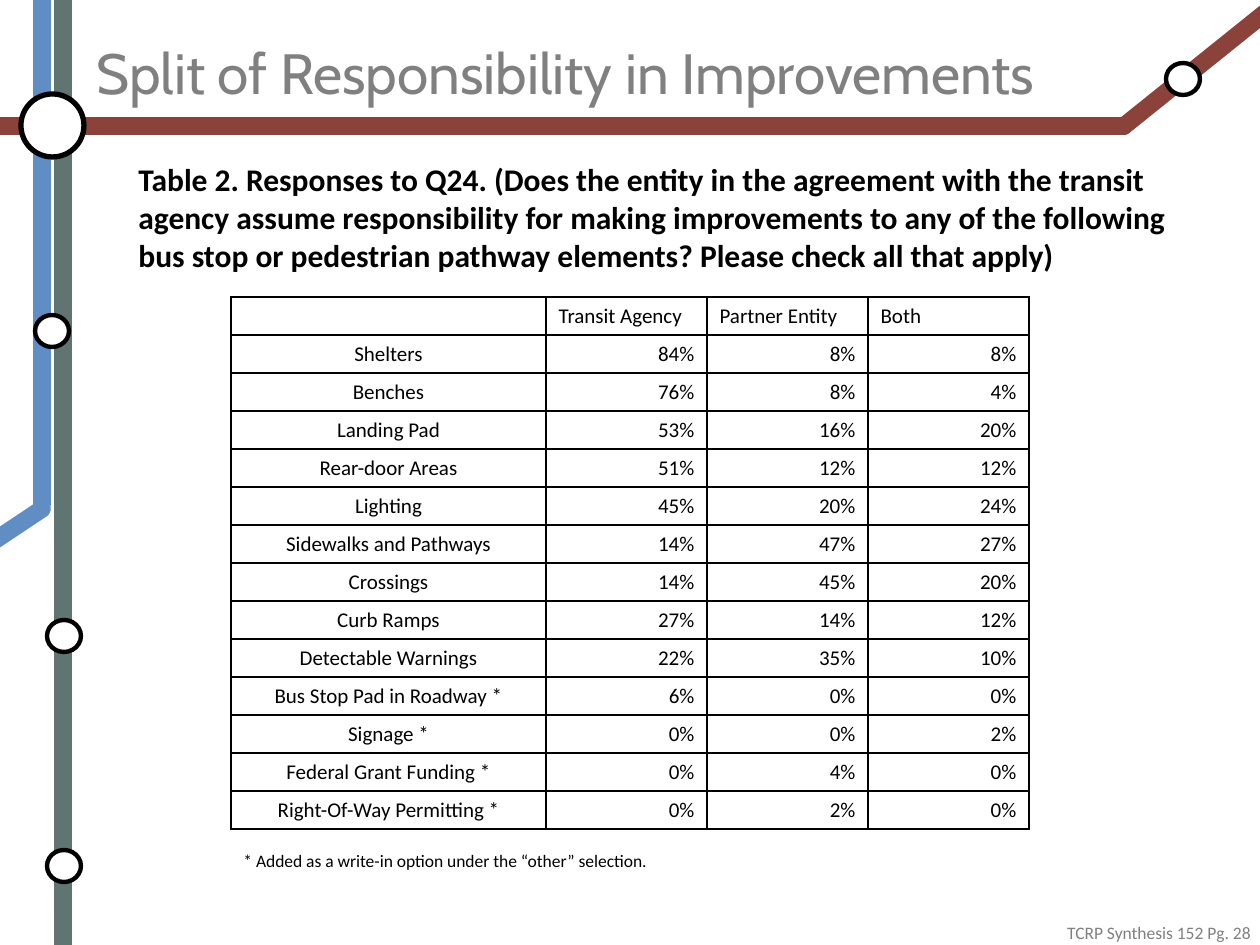
from lxml import etree
from pptx import Presentation, util as u
from pptx.dml.color import RGBColor
from pptx.enum import shapes, text
from pptx.oxml.ns import qn

EMU_PER_PX = 914400 / 126
BLACK = RGBColor(0, 0, 0)
WHITE = RGBColor(255, 255, 255)
GRAY = RGBColor(0x80, 0x80, 0x80)
GREEN = RGBColor(0x60, 0x74, 0x72)
BLUE = RGBColor(0x60, 0x8D, 0xC4)
RED = RGBColor(0x8A, 0x42, 0x3A)
LEFT, CENTER, RIGHT = text.PP_ALIGN.LEFT, text.PP_ALIGN.CENTER, text.PP_ALIGN.RIGHT

ROUTES = [
    (63, 945, 63, 0, GREEN),
    (42, 504, 42, 0, BLUE),
    (42, 509, -21, 551, BLUE),
    (0, 126, 1124, 126, RED),
    (1281, 0, 1124, 126, RED),
]
STOPS = [(47, 620), (47, 850), (35, 315), (1166, 63)]
ROWS = [
    ("", "Transit Agency", "Partner Entity", "Both"),
    ("Shelters", "84%", "8%", "8%"),
    ("Benches", "76%", "8%", "4%"),
    ("Landing Pad", "53%", "16%", "20%"),
    ("Rear-door Areas", "51%", "12%", "12%"),
    ("Lighting", "45%", "20%", "24%"),
    ("Sidewalks and Pathways", "14%", "47%", "27%"),
    ("Crossings", "14%", "45%", "20%"),
    ("Curb Ramps", "27%", "14%", "12%"),
    ("Detectable Warnings", "22%", "35%", "10%"),
    ("Bus Stop Pad in Roadway *", "6%", "0%", "0%"),
    ("Signage *", "0%", "0%", "2%"),
    ("Federal Grant Funding *", "0%", "4%", "0%"),
    ("Right-Of-Way Permitting *", "0%", "2%", "0%"),
]
COLUMN_WIDTHS = [315, 161, 161, 161]
ROW_HEIGHT = 38
QUESTION = (
    "Table 2. Responses to Q24. (Does the entity in the agreement with the transit "
    "agency assume responsibility for making improvements to any of the following "
    "bus stop or pedestrian pathway elements? Please check all that apply)"
)


def px(*lengths):
    return [u.Emu(round(length * EMU_PER_PX)) for length in lengths]


def add_route(page, x1, y1, x2, y2, color):
    """Draw one transit line with rounded ends."""
    route = page.shapes.add_connector(shapes.MSO_CONNECTOR.STRAIGHT, *px(x1, y1, x2, y2))
    route.line.color.rgb = color
    route.line.width = u.Pt(10)
    properties = route._element.spPr
    properties.find(qn("a:ln")).set("cap", "rnd")
    etree.SubElement(properties, qn("a:effectLst"))


def add_stop(page, left, top, width, height, weight):
    stop = page.shapes.add_shape(shapes.MSO_SHAPE.OVAL, *px(left, top, width, height))
    stop.shadow.inherit = False
    stop.fill.solid()
    stop.fill.fore_color.rgb = WHITE
    stop.line.color.rgb = BLACK
    stop.line.width = u.Pt(weight)


def write(para, words, size, color=BLACK, font="Calibri", bold=False, align=LEFT):
    para.alignment = align
    span = para.add_run()
    span.text = words
    span.font.name = font
    span.font.size = u.Pt(size)
    span.font.bold = bold
    span.font.color.rgb = color


def add_text(page, area, words, size, anchor=text.MSO_ANCHOR.TOP, wrap=True, **style):
    box = page.shapes.add_textbox(*px(*area))
    box.text_frame.word_wrap = wrap
    box.text_frame.vertical_anchor = anchor
    write(box.text_frame.paragraphs[0], words, size, **style)


def add_borders(cell):
    properties = cell._tc.get_or_add_tcPr()
    for place, side in enumerate(("lnL", "lnR", "lnT", "lnB")):
        border = etree.Element(qn(f"a:{side}"), w=str(u.Pt(1)))
        fill = etree.SubElement(border, qn("a:solidFill"))
        etree.SubElement(fill, qn("a:srgbClr"), val=str(BLACK))
        properties.insert(place, border)


def fill_cell(cell, words, align):
    cell.fill.background()
    cell.vertical_anchor = text.MSO_ANCHOR.MIDDLE
    add_borders(cell)
    para = cell.text_frame.paragraphs[0]
    if words:
        write(para, words, 12, align=align)
    else:
        etree.SubElement(para._p, qn("a:endParaRPr"), sz="1200")


def add_responses(page, left, top):
    area = px(left, top, sum(COLUMN_WIDTHS), ROW_HEIGHT * len(ROWS))
    table = page.shapes.add_table(len(ROWS), len(COLUMN_WIDTHS), *area).table
    table.first_row = table.horz_banding = False
    for column, width in zip(table.columns, px(*COLUMN_WIDTHS)):
        column.width = width
    for r, row in enumerate(ROWS):
        table.rows[r].height = px(ROW_HEIGHT)[0]
        for c, words in enumerate(row):
            align = LEFT if r == 0 else CENTER if c == 0 else RIGHT
            fill_cell(table.cell(r, c), words, align)


def main():
    deck = Presentation()
    deck.slide_width, deck.slide_height = px(1260, 945)
    page = deck.slides.add_slide(deck.slide_layouts[6])
    for route in ROUTES:
        add_route(page, *route)
    add_stop(page, 21, 94, 63, 63, 3)
    for left, top in STOPS:
        add_stop(page, left, top, 34, 32, 2.5)
    add_text(page, (84, 38, 1040, 67), "Split of Responsibility in Improvements", 32.4,
             anchor=text.MSO_ANCHOR.MIDDLE, color=GRAY, font="Cabin")
    add_text(page, (1050, 916, 213, 34), "TCRP Synthesis 152 Pg. 28", 10,
             wrap=False, color=GRAY, align=RIGHT)
    add_responses(page, 231, 297)
    add_text(page, (126, 154, 1063, 127), QUESTION, 18, bold=True)
    add_text(page, (231, 844, 1076, 34),
             "* Added as a write-in option under the “other” selection.", 10)
    deck.save("out.pptx")


if __name__ == "__main__":
    main()
